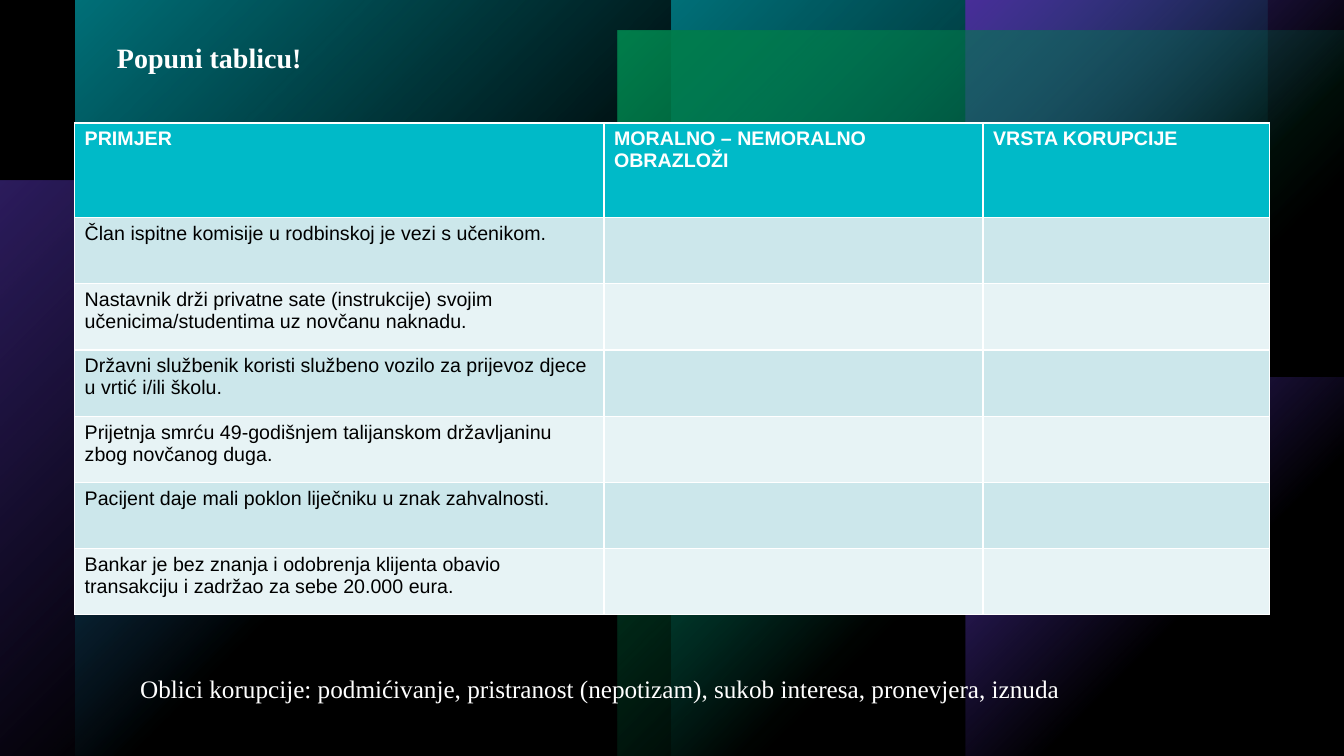
from lxml.etree import SubElement
from pptx import Presentation
from pptx.dml.color import RGBColor
from pptx.enum.shapes import MSO_SHAPE
from pptx.enum.text import MSO_ANCHOR, MSO_AUTO_SIZE, PP_ALIGN
from pptx.oxml import parse_xml
from pptx.oxml.ns import nsdecls, qn
from pptx.util import Inches, Pt

WIDTH, HEIGHT = 13.33, 7.5
BLACK, WHITE, TEAL, PURPLE, GREEN = "000000", "FFFFFF", "00BAC8", "794DFF", "00D17D"
BANDS = ["CCE7EB", "E7F3F5"]

TITLE = "Popuni tablicu!"
FORMS = ("Oblici korupcije: podmićivanje, pristranost (nepotizam), "
         "sukob interesa, pronevjera, iznuda")
HEADERS = ["PRIMJER", "MORALNO – NEMORALNO\nOBRAZLOŽI", "VRSTA KORUPCIJE"]
EXAMPLES = [
    "Član ispitne komisije u rodbinskoj je vezi s učenikom.",
    "Nastavnik drži privatne sate (instrukcije) svojim učenicima/studentima "
    "uz novčanu naknadu.",
    "Državni službenik koristi službeno vozilo za prijevoz djece u vrtić i/ili školu.",
    "Prijetnja smrću 49-godišnjem talijanskom državljaninu zbog novčanog duga.",
    "Pacijent daje mali poklon liječniku u znak zahvalnosti.",
    "Bankar je bez znanja i odobrenja klijenta obavio transakciju i zadržao "
    "za sebe 20.000 eura.",
]
COLUMNS = [5.25, 3.76, 2.84]
TABLE_LEFT, TABLE_TOP, TABLE_HEIGHT, HEADER_HEIGHT = 0.74, 1.22, 4.88, 0.94

# Glow panels: width, height, horizontal start, bottom gap, rotation, mirrored, colour, opacity
PANEL, SQUARE = 5.91, HEIGHT / 2
GLOWS = [
    (5.71, 5.71, 0, 0, 270, False, PURPLE, 60),
    (PANEL, HEIGHT, 0.75 + PANEL, 0, 0, False, TEAL, 100),
    (PANEL, HEIGHT, 0.75, 0, 0, True, TEAL, 100),
    (SQUARE, SQUARE, WIDTH - SQUARE, 0, 90, False, PURPLE, 100),
    (SQUARE, SQUARE, WIDTH - SQUARE, SQUARE, 90, True, PURPLE, 100),
    (7.2, 7.2, WIDTH - 7.2, 0, 180, False, GREEN, 100),
]


def color(value):
    return RGBColor.from_string(value)


def add_panel(page, left, top, width, height):
    panel = page.shapes.add_shape(
        MSO_SHAPE.RECTANGLE, Inches(left), Inches(top), Inches(width), Inches(height))
    panel.shadow.inherit = False
    panel.line.fill.background()
    return panel


def set_opacity(panel, value, percent):
    panel.fill.solid()
    panel.fill.fore_color.rgb = color(value)
    srgb = panel._element.spPr.find(qn("a:solidFill")).find(qn("a:srgbClr"))
    SubElement(srgb, qn("a:alpha")).set("val", str(percent * 1000))


def set_glow(panel, value, percent):
    """Fill with a circular gradient that fades out from one corner."""
    stops = "".join(
        f'<a:gs pos="{place * 1000}"><a:srgbClr val="{value}">'
        f'<a:alpha val="{alpha * 1000}"/></a:srgbClr></a:gs>'
        for place, alpha in [(0, percent), (60, 0)])
    gradient = parse_xml(
        f'<a:gradFill {nsdecls("a")} rotWithShape="1"><a:gsLst>{stops}</a:gsLst>'
        '<a:path path="circle"><a:fillToRect r="100000" b="100000"/></a:path></a:gradFill>')
    panel._element.spPr.find(qn("a:prstGeom")).addnext(gradient)


def write(frame, text, size, font, value, bold=False):
    frame.text = text
    for para in frame.paragraphs:
        for span in para.runs:
            span.font.size = Pt(size)
            span.font.name = font
            span.font.bold = bold
            span.font.color.rgb = color(value)


def place_line(page, box, text, left, top, height, size, bold=False):
    """Move a placeholder to the front and set its single indented line."""
    box.left, box.top, box.width, box.height = (
        Inches(length) for length in (left, top, 10.95, height))
    page.shapes._spTree.append(box._element)
    frame = box.text_frame
    frame.word_wrap = True
    frame.auto_size = MSO_AUTO_SIZE.NONE
    frame.vertical_anchor = MSO_ANCHOR.MIDDLE
    write(frame, text, size, "Times New Roman", WHITE, bold)
    para = frame.paragraphs[0]
    para.alignment = PP_ALIGN.LEFT
    para.space_before = Pt(0)
    properties = para._p.get_or_add_pPr()
    properties.set("marL", str(Inches(0.25)))
    properties.set("indent", "0")
    SubElement(properties, qn("a:buNone"))


def add_backdrop(page):
    page.background.fill.solid()
    page.background.fill.fore_color.rgb = color(BLACK)
    for width, height, left, gap, turn, mirrored, value, percent in GLOWS:
        panel = add_panel(page, left, HEIGHT - height - gap, width, height)
        panel.rotation = turn
        if mirrored:
            panel._element.spPr.find(qn("a:xfrm")).set("flipH", "1")
        set_glow(panel, value, percent)
    set_opacity(add_panel(page, 0, 0, WIDTH, HEIGHT), BLACK, 40)


def add_examples(page):
    rows = [HEADERS] + [[example, "", ""] for example in EXAMPLES]
    table = page.shapes.add_table(
        len(rows), len(COLUMNS), Inches(TABLE_LEFT), Inches(TABLE_TOP),
        Inches(sum(COLUMNS)), Inches(TABLE_HEIGHT)).table
    for column, width in zip(table.columns, COLUMNS):
        column.width = Inches(width)
    row_height = (TABLE_HEIGHT - HEADER_HEIGHT) / len(EXAMPLES)
    for r, texts in enumerate(rows):
        header = r == 0
        table.rows[r].height = Inches(HEADER_HEIGHT if header else row_height)
        for c, text in enumerate(texts):
            cell = table.cell(r, c)
            cell.fill.solid()
            cell.fill.fore_color.rgb = color(TEAL if header else BANDS[(r - 1) % 2])
            if text:
                write(cell.text_frame, text, 14, "Arial", WHITE if header else BLACK, header)


def main():
    deck = Presentation()
    deck.slide_width, deck.slide_height = Inches(WIDTH), Inches(HEIGHT)
    page = deck.slides.add_slide(deck.slide_layouts[1])
    title, body = page.placeholders
    add_backdrop(page)
    add_examples(page)
    place_line(page, body, FORMS, 1.04, 6.63, 0.4, 18)
    place_line(page, title, TITLE, 0.81, 0.35, 0.44, 20, bold=True)
    deck.save("out.pptx")


if __name__ == "__main__":
    main()
